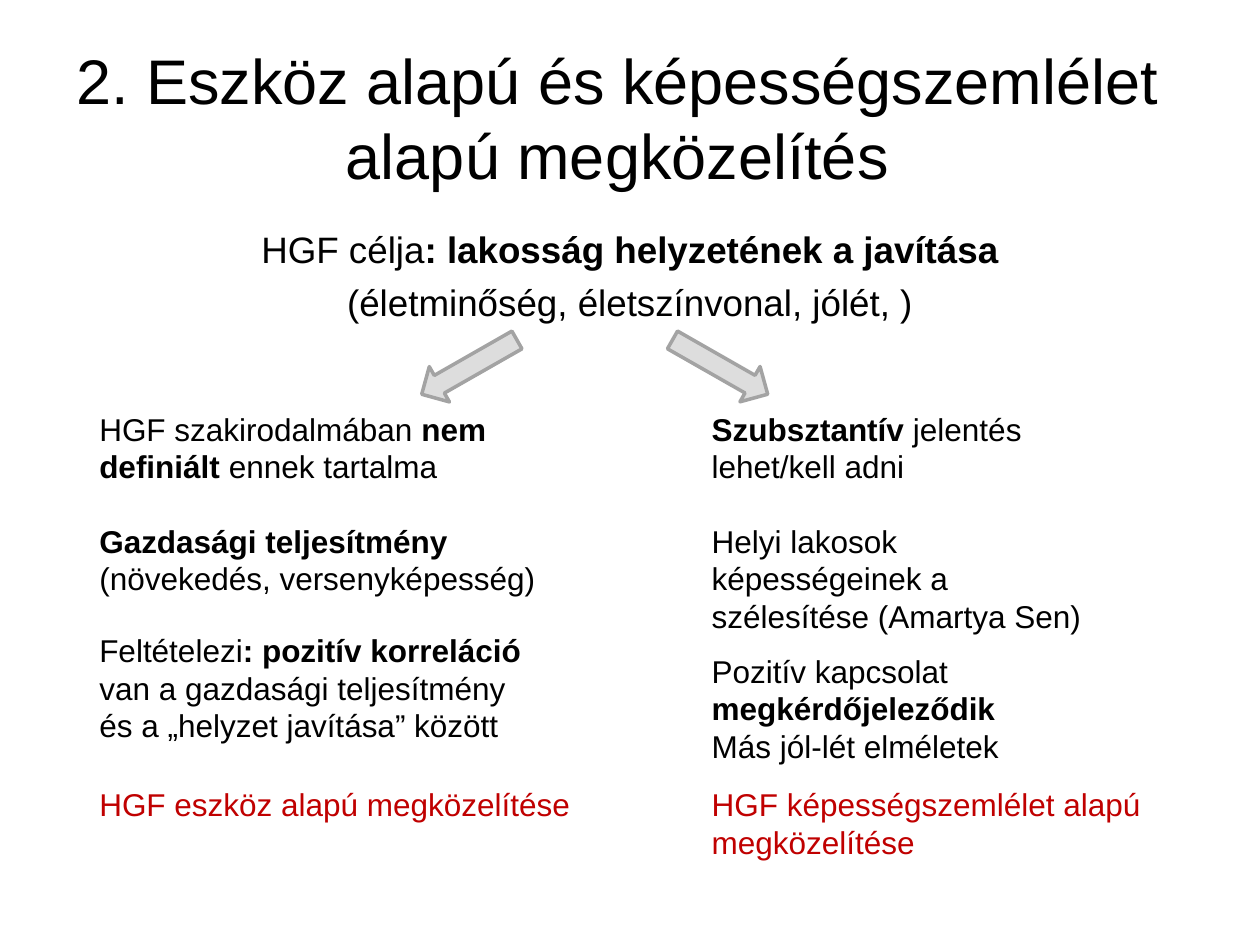
from dataclasses import dataclass

from lxml import etree
from pptx import Presentation
from pptx import util as u
from pptx.dml.color import RGBColor
from pptx.enum import shapes, text
from pptx.oxml.ns import qn

WIDTH, HEIGHT = u.Inches(10), u.Inches(7.5)
FONT = "Arial"
BLACK, RED = "000000", "C00000"
ARROW_FILL, ARROW_LINE = "DDDDDD", "A3A3A3"
LEFT, RIGHT = 0.069, 0.555  # column starts, as shares of the width
LINE_GAP = 20.7             # one line of 18 pt text, in points


@dataclass
class Para:
    wording: str  # **bold** parts are marked by double asterisks
    before: float = 0


@dataclass
class Block:
    x: float
    y: float
    w: float
    h: float
    paras: list[Para]
    color: str = BLACK


@dataclass
class Arrow:
    x: float
    preset: shapes.MSO_SHAPE
    angle: float


def rgb(value: str) -> RGBColor:
    return RGBColor.from_string(value)


def place(shape, x: float, y: float, w: float, h: float) -> None:
    """Position a shape by shares of the slide's size."""
    shape.left, shape.top = int(x * WIDTH), int(y * HEIGHT)
    shape.width, shape.height = int(w * WIDTH), int(h * HEIGHT)


def write(frame, paras: list[Para], size: float, color: str = BLACK,
          align=text.PP_ALIGN.LEFT, plain_list: bool = False) -> None:
    frame.word_wrap = True
    frame.auto_size = text.MSO_AUTO_SIZE.NONE
    for index, para in enumerate(paras):
        line = frame.add_paragraph() if index else frame.paragraphs[0]
        if plain_list:
            props = line._p.get_or_add_pPr()
            props.set("marL", "0")
            props.set("indent", "0")
            etree.SubElement(props, qn("a:buNone"))
        line.alignment = align
        line.space_before = u.Pt(para.before)
        line.font.name, line.font.size = FONT, u.Pt(size)
        line.font.color.rgb = rgb(color)
        for part, wording in enumerate(para.wording.split("**")):
            if wording:
                run = line.add_run()
                run.text = wording
                if part % 2:
                    run.font.bold = True


def add_block(slide, block: Block) -> None:
    box = slide.shapes.add_textbox(0, 0, 0, 0)
    place(box, block.x, block.y, block.w, block.h)
    write(box.text_frame, block.paras, 18, block.color)


def add_arrow(slide, arrow: Arrow) -> None:
    shape = slide.shapes.add_shape(arrow.preset, 0, 0, 0, 0)
    place(shape, arrow.x, 0.367, 0.087, 0.043)
    shape.rotation = arrow.angle
    shape.shadow.inherit = False
    shape.fill.solid()
    shape.fill.fore_color.rgb = rgb(ARROW_FILL)
    shape.line.color.rgb = rgb(ARROW_LINE)
    shape.line.width = u.Pt(2)


BLOCKS = [
    # Asset-based approach
    Block(LEFT, 0.427, 0.394, 0.256, [
        Para("HGF szakirodalmában **nem definiált** ennek tartalma"),
        Para("**Gazdasági teljesítmény**", LINE_GAP),
        Para("(növekedés, versenyképesség)")]),
    Block(LEFT, 0.661, 0.374, 0.135, [
        Para("Feltételezi**: pozitív korreláció **van a gazdasági "
             "teljesítmény és a „helyzet javítása” között")]),
    Block(LEFT, 0.824, 0.394, 0.053,
          [Para("HGF eszköz alapú megközelítése")], RED),
    # Capability-based approach
    Block(RIGHT, 0.427, 0.331, 0.256, [
        Para("**Szubsztantív **jelentés lehet/kell adni"),
        Para("Helyi lakosok képességeinek a szélesítése (Amartya Sen)",
             LINE_GAP)]),
    Block(RIGHT, 0.683, 0.378, 0.135, [
        Para("Pozitív kapcsolat **megkérdőjeleződik**"),
        Para("Más jól-lét elméletek")]),
    Block(RIGHT, 0.824, 0.445, 0.095,
          [Para("HGF képességszemlélet alapú megközelítése")], RED),
]
ARROWS = [
    Arrow(0.329, shapes.MSO_SHAPE.LEFT_ARROW, -29.7),
    Arrow(0.528, shapes.MSO_SHAPE.RIGHT_ARROW, 29.7),
]


def main() -> None:
    deck = Presentation()
    deck.slide_width, deck.slide_height = WIDTH, HEIGHT
    slide = deck.slides.add_slide(deck.slide_layouts[1])

    # Title and shared goal
    title, goal = slide.shapes.title, slide.placeholders[1]
    place(title, 0, 0.04, 0.98, 0.167)
    title.text_frame.vertical_anchor = text.MSO_ANCHOR.MIDDLE
    write(title.text_frame,
          [Para("2. Eszköz alapú és képességszemlélet alapú megközelítés")],
          36, align=text.PP_ALIGN.CENTER)
    place(goal, 0.05, 0.233, 0.9, 0.131)
    write(goal.text_frame,
          [Para("HGF célja**: lakosság helyzetének a javítása**"),
           Para("(életminőség, életszínvonal, jólét, )", 5)],
          21, align=text.PP_ALIGN.CENTER, plain_list=True)

    # Two approaches and the arrows leading to them
    for block in BLOCKS:
        add_block(slide, block)
    for arrow in ARROWS:
        add_arrow(slide, arrow)

    deck.save("out.pptx")


if __name__ == "__main__":
    main()
